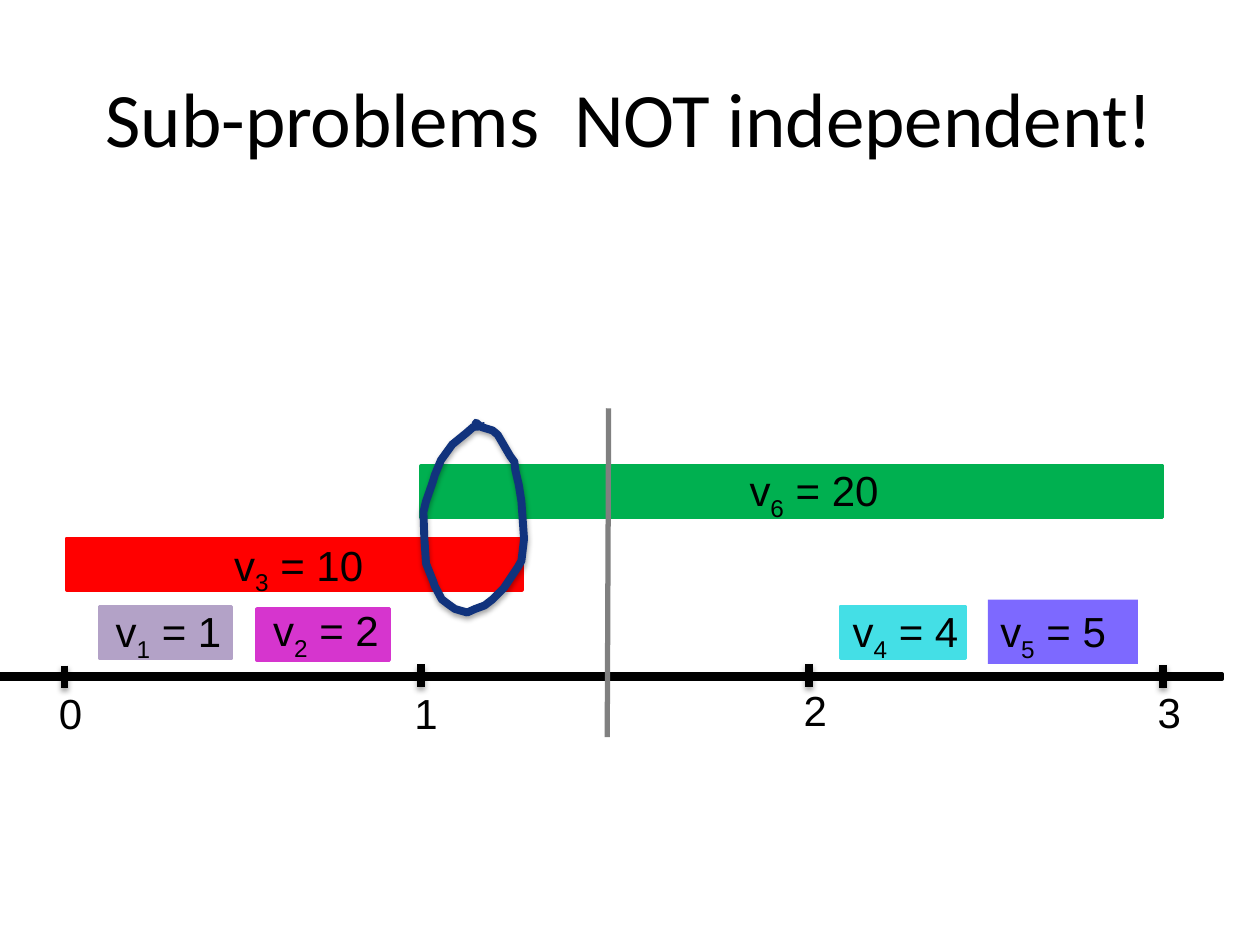
from lxml import etree
from pptx import Presentation
from pptx.dml.color import RGBColor
from pptx.enum import shapes, text
from pptx.oxml import ns
from pptx.util import Pt

COLORS = {
    "black": "000000", "red": "FF0000", "green": "00B050", "violet": "7D69FF",
    "lilac": "B3A2C7", "magenta": "D635CE", "cyan": "44DFE6",
    "gray": "808080", "navy": "11337D",
}
SHADOW = (
    f'<a:effectLst {ns.nsdecls("a")}><a:outerShdw blurRad="{Pt(3.1)}" dist="{Pt(1.8)}" '
    'dir="5400000" rotWithShape="0"><a:srgbClr val="000000"><a:alpha val="35000"/>'
    '</a:srgbClr></a:outerShdw></a:effectLst>'
)
NO_SHADOW = f'<a:effectLst {ns.nsdecls("a")}/>'


def set_line(sp, color, width, effect=NO_SHADOW):
    sp.line.color.rgb = RGBColor.from_string(COLORS[color])
    sp.line.width = Pt(width)
    sp._element.spPr.append(etree.fromstring(effect))


def add_label(s, x, y, w, h, parts):
    """Text box whose odd-numbered parts are subscripts."""
    sp = s.shapes.add_textbox(Pt(x), Pt(y), Pt(w), Pt(h))
    sp.text_frame.word_wrap = True
    for i, part in enumerate(parts):
        r = sp.text_frame.paragraphs[0].add_run()
        r.text = part
        r.font.name, r.font.size = "Arial", Pt(24)
        r.font.color.rgb = RGBColor.from_string(COLORS["black"])
        if i % 2:
            r._r.get_or_add_rPr().set("baseline", "-25000")
    return sp


prs = Presentation()
prs.slide_width, prs.slide_height = Pt(720), Pt(540)
s = prs.slides.add_slide(prs.slide_layouts[5])

# Title
sp = s.shapes.title
sp.left, sp.top, sp.width, sp.height = Pt(36), Pt(21.6), Pt(648), Pt(90)
tf = sp.text_frame
tf.text = "Sub-problems  NOT independent!"
tf.vertical_anchor = text.MSO_ANCHOR.MIDDLE
p = tf.paragraphs[0]
p.alignment = text.PP_ALIGN.CENTER
font = p.runs[0].font
font.name, font.size = "Calibri", Pt(44)
font.color.rgb = RGBColor.from_string(COLORS["black"])

# Time axis and interval bars: color, left, top, width, height
bars = [
    ("black", 0, 385.2, 698.4, 2.9),
    ("red", 38.2, 307.6, 260, 29.5),
    ("green", 240.7, 266.2, 423.6, 29.5),
    ("lilac", 56.8, 346.5, 75.6, 29.5),
    ("magenta", 146.9, 347.8, 75.6, 29.5),
    ("cyan", 480.2, 346.8, 71.6, 29.5),
]
for color, x, y, w, h in bars:
    sp = s.shapes.add_shape(shapes.MSO_SHAPE.RECTANGLE, Pt(x), Pt(y), Pt(w), Pt(h))
    sp.fill.solid()
    sp.fill.fore_color.rgb = RGBColor.from_string(COLORS[color])
    set_line(sp, color, 2)

# Interval values: index, value, left, top, width
values = [
    (1, 1, 59, 342.7, 87), (2, 2, 149, 342, 87), (3, 10, 126.7, 304.6, 104),
    (4, 4, 480.2, 342.7, 81), (5, 5, 564.5, 342.7, 85.7), (6, 20, 421.2, 262.1, 95),
]
for index, value, x, y, w in values:
    sp = add_label(s, x, y, w, 36.7, ["v", str(index), f" = {value}"])
    if index == 5:
        sp.fill.solid()
        sp.fill.fore_color.rgb = RGBColor.from_string(COLORS["violet"])

# Axis ticks and their numbers: tick x, tick top, number left, number top
ticks = [(36.9, 380.4, 26.6, 389.5), (240.5, 379.6, 229.7, 389.5),
         (462.2, 379.4, 452.2, 387.4), (664.4, 380, 654.5, 388.8)]
for number, (x, y, label_x, label_y) in enumerate(ticks):
    sp = s.shapes.add_connector(shapes.MSO_CONNECTOR.STRAIGHT, Pt(x), Pt(y), Pt(x), Pt(y + 13))
    set_line(sp, "black", 4.5, SHADOW)
    add_label(s, label_x, label_y, 19.5, 27.5, [str(number)])

# Split line
sp = s.shapes.add_connector(shapes.MSO_CONNECTOR.STRAIGHT, Pt(347.8), Pt(233.3), Pt(347), Pt(421.2))
set_line(sp, "gray", 3)

# Hand-drawn loop around the overlap, in points
loop = [
    (277, 243.5), (270.5, 244), (266.5, 247.5), (258.5, 254), (252, 263), (248.5, 271.5),
    (247.5, 275), (243.5, 286.5), (242, 292.5), (242.5, 307), (243.5, 322), (247.5, 332),
    (248.5, 335), (252.5, 342.5), (256.5, 345.5), (260, 348), (267, 350), (271.5, 348),
    (277, 346), (281.5, 342.5), (288, 336), (296, 324), (298, 320.5), (299.5, 308),
    (298, 286.5), (296.5, 277), (294.5, 268.5), (294, 264), (291.5, 260.5), (284.5, 248.5),
    (281.5, 246), (275, 244), (272, 241.5), (271.5, 244),
]
tenths = [(round(x * 10), round(y * 10)) for x, y in loop]
builder = s.shapes.build_freeform(*tenths[0], scale=Pt(1) / 10)
builder.add_line_segments(tenths[1:], close=False)
sp = builder.convert_to_shape()
sp.fill.background()
set_line(sp, "navy", 4.5, SHADOW)

prs.save("out.pptx")
